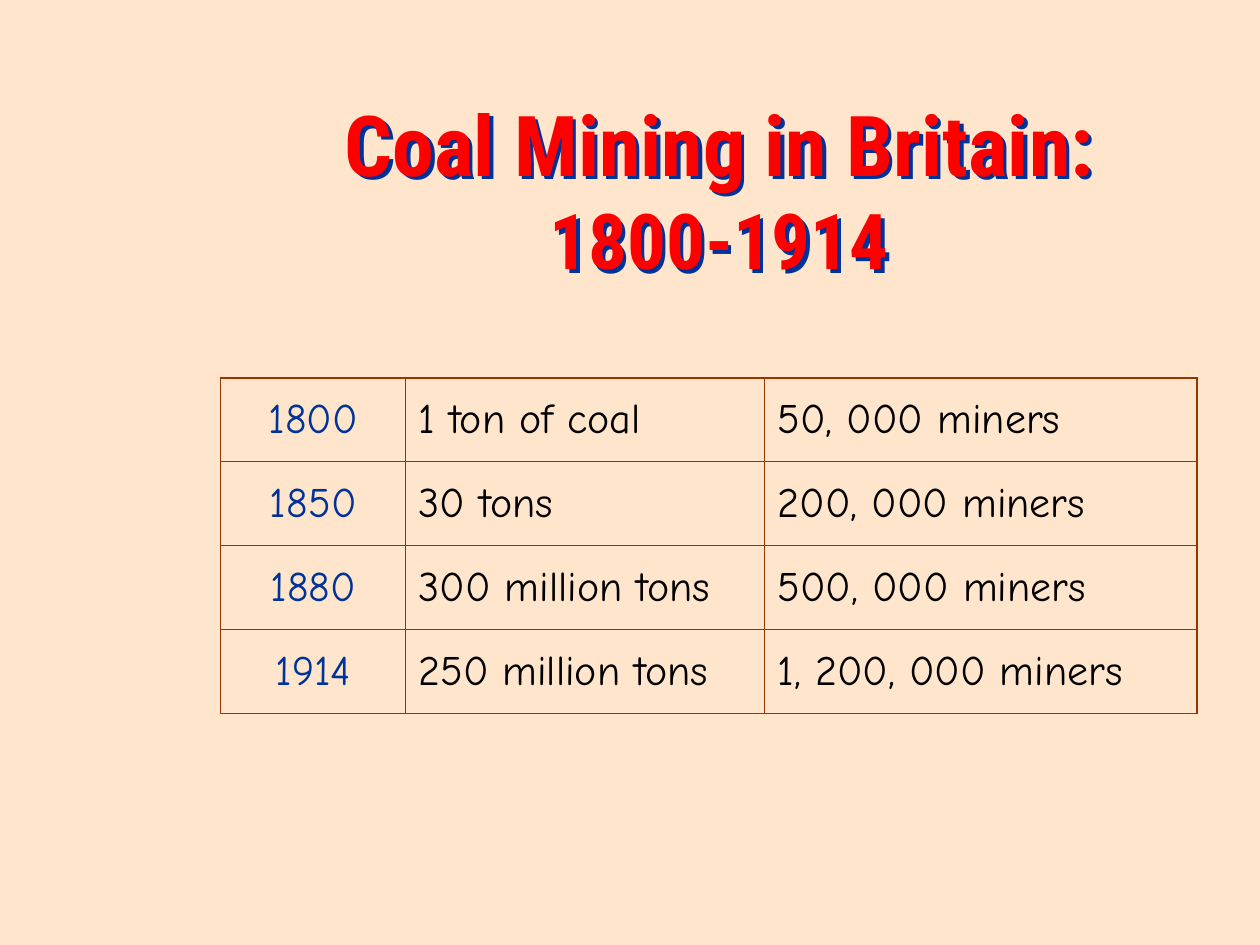
from lxml.etree import SubElement
from pptx import Presentation
from pptx.dml.color import RGBColor
from pptx.enum.text import MSO_ANCHOR, MSO_AUTO_SIZE, PP_ALIGN
from pptx.oxml import parse_xml
from pptx.oxml.ns import nsdecls, qn
from pptx.util import Cm, Pt

COLORS = {
    "background": "FFE5CB",
    "heading": "FF0000",
    "year": "003399",
    "figure": "000000",
    "border": "993300",
}


class SlideBuilder:
    """Holds the deck's style and the slide being filled."""

    heading_font = "Roboto Condensed"
    table_font = "Comic Neue"
    border_width = Pt(0.75)

    def __init__(self, deck):
        self.slide = deck.slides.add_slide(deck.slide_layouts[5])  # Title Only
        fill = self.slide.background.fill
        fill.solid()
        fill.fore_color.rgb = RGBColor.from_string(COLORS["background"])

    def format_font(self, font, color, **values):
        for name, value in values.items():
            setattr(font, name, value)
        font.color.rgb = RGBColor.from_string(COLORS[color])

    def title(self, lines, left, top, width, height):
        heading = self.slide.shapes.title
        place = {"left": left, "top": top, "width": width, "height": height}
        for name, value in place.items():
            setattr(heading, name, Cm(value))
        heading.fill.background()
        frame = heading.text_frame
        layout = {
            "word_wrap": True,
            "auto_size": MSO_AUTO_SIZE.SHAPE_TO_FIT_TEXT,
            "vertical_anchor": MSO_ANCHOR.TOP,
        }
        for name, value in layout.items():
            setattr(frame, name, value)

        paragraph = frame.paragraphs[0]
        paragraph.alignment = PP_ALIGN.CENTER
        paragraph.line_spacing = 1.0
        paragraph.space_before = Pt(0)
        for index, (wording, size) in enumerate(lines):
            if index:
                paragraph.add_line_break()
            run = paragraph.add_run()
            run.text = wording
            self.format_font(run.font, "heading", name=self.heading_font,
                             size=Pt(size), bold=True)

        # Hard blue shadow, down and to the right
        heading._element.spPr.append(parse_xml(
            f'<a:effectLst {nsdecls("a")}>'
            '<a:outerShdw dist="35921" dir="2700000" algn="ctr" rotWithShape="0">'
            f'<a:srgbClr val="{COLORS["year"]}"/></a:outerShdw></a:effectLst>'))

    def cell_borders(self, cell):
        properties = cell._tc.get_or_add_tcPr()
        for side in ("a:lnL", "a:lnR", "a:lnT", "a:lnB"):
            line = SubElement(properties, qn(side), w=str(self.border_width))
            paint = SubElement(line, qn("a:solidFill"))
            SubElement(paint, qn("a:srgbClr"), val=COLORS["border"])

    def table(self, records, left, top, column_widths, row_height):
        grid = self.slide.shapes.add_table(
            len(records), len(column_widths), Cm(left), Cm(top),
            Cm(sum(column_widths)), Cm(row_height * len(records))).table
        grid.first_row = grid.horz_banding = False
        for column, width in zip(grid.columns, column_widths):
            column.width = Cm(width)
        for row, record in zip(grid.rows, records):
            row.height = Cm(row_height)
            for index, (cell, wording) in enumerate(zip(row.cells, record)):
                is_year = index == 0
                self.cell_borders(cell)
                cell.fill.background()
                cell.vertical_anchor = MSO_ANCHOR.MIDDLE
                paragraph = cell.text_frame.paragraphs[0]
                paragraph.alignment = PP_ALIGN.CENTER if is_year else PP_ALIGN.LEFT
                run = paragraph.add_run()
                run.text = wording
                self.format_font(run.font, "year" if is_year else "figure",
                                 name=self.table_font, size=Pt(24))


def main():
    deck = Presentation()
    deck.slide_width, deck.slide_height = Cm(25.4), Cm(19.05)
    builder = SlideBuilder(deck)

    # Heading
    builder.title([("Coal Mining in Britain:", 48), ("1800-1914", 44)],
                  left=4.88, top=1.73, width=19.25, height=4.14)

    # Year, output and workforce
    coal_records = [
        ("1800", "1 ton of coal", "50, 000 miners"),
        ("1850", "30 tons", "200, 000 miners"),
        ("1880", "300 million tons", "500, 000 miners"),
        ("1914", "250 million tons", "1, 200, 000 miners"),
    ]
    builder.table(coal_records, left=4.45, top=7.62,
                  column_widths=(3.73, 7.24, 8.71), row_height=1.69)

    deck.save("out.pptx")


if __name__ == "__main__":
    main()
